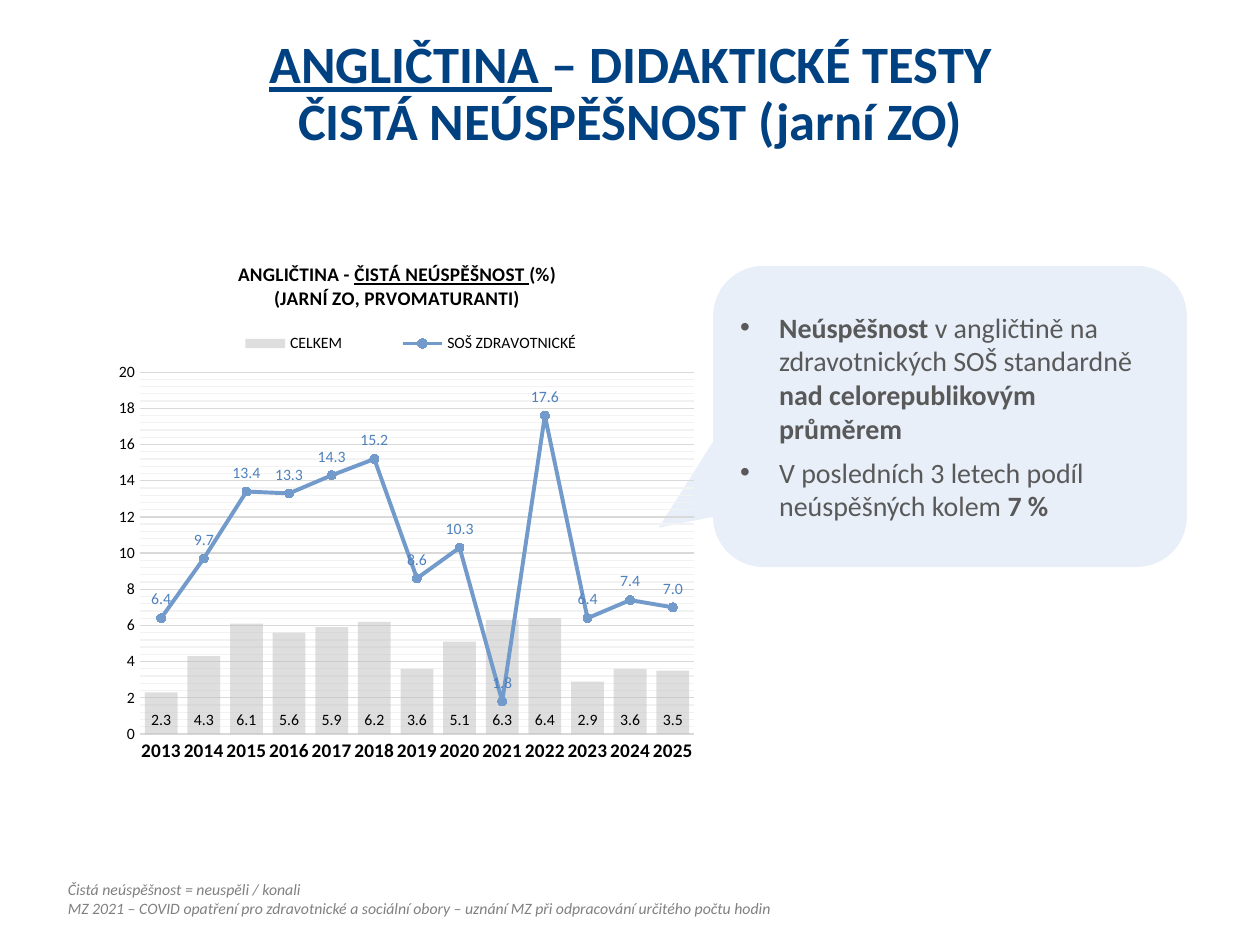
from lxml import etree
from pptx import Presentation
from pptx import util as u
from pptx.chart.data import CategoryChartData
from pptx.dml.color import RGBColor
from pptx.enum import chart as ch, shapes, text
from pptx.oxml import parse_xml
from pptx.oxml.ns import nsdecls, qn

FONT = "Calibri"
YEARS = [str(year) for year in range(2013, 2026)]
ALL_SCHOOLS = [2.3, 4.3, 6.1, 5.6, 5.9, 6.2, 3.6, 5.1, 6.3, 6.4, 2.9, 3.6, 3.5]
HEALTH_SCHOOLS = [6.4, 9.7, 13.4, 13.3, 14.3, 15.2, 8.6, 10.3, 1.8, 17.6, 6.4, 7.4, 7.0]


def inches(*lengths):
    return [u.Inches(length) for length in lengths]


def color(hex_string):
    return RGBColor.from_string(hex_string)


def set_font(font, size, hex_string, bold=False, italic=False, underline=False):
    font.name, font.size = FONT, u.Pt(size)
    font.color.rgb = color(hex_string)
    font.bold, font.italic, font.underline = bold, italic, underline


def set_fill(fill, hex_string, opacity=None):
    fill.solid()
    fill.fore_color.rgb = color(hex_string)
    if opacity is not None:
        solid = fill._xPr.find(qn("a:solidFill"))
        etree.SubElement(solid[0], qn("a:alpha"), val=str(opacity * 1000))


def write(frame, paragraphs, align=None, line_spacing=None, before=None,
          bullet_indent=None, **style):
    """Each paragraph is a list of (text, font overrides) pairs."""
    for number, spans in enumerate(paragraphs):
        para = frame.add_paragraph() if number else frame.paragraphs[0]
        para.alignment = align
        if line_spacing:
            para.line_spacing = line_spacing
        if before:
            para.space_before = u.Pt(before)
        if bullet_indent:
            props = para._p.get_or_add_pPr()
            props.set("marL", str(bullet_indent))
            props.set("indent", str(-bullet_indent))
            etree.SubElement(props, qn("a:buFont"), typeface="Arial")
            etree.SubElement(props, qn("a:buChar"), char="•")
        for words, changes in spans:
            span = para.add_run()
            span.text = words
            set_font(span.font, **{**style, **changes})


def add_text(page, box, paragraphs, anchor=text.MSO_ANCHOR.TOP, **style):
    frame = page.shapes.add_textbox(*inches(*box)).text_frame
    frame.word_wrap = True
    frame.vertical_anchor = anchor
    write(frame, paragraphs, **style)


def add_title(page, box):
    add_text(page, box, [
        [("ANGLIČTINA ", {"underline": True}), ("– DIDAKTICKÉ TESTY", {})],
        [("ČISTÁ NEÚSPĚŠNOST (jarní ZO)", {})],
    ], anchor=text.MSO_ANCHOR.MIDDLE, align=text.PP_ALIGN.CENTER,
        line_spacing=0.9, size=30, hex_string="004182", bold=True)


def add_callout(page, box):
    shape = page.shapes.add_shape(
        shapes.MSO_SHAPE.ROUNDED_RECTANGULAR_CALLOUT, *inches(*box))
    for index, value in enumerate((-0.615, 0.37, 0.167)):
        shape.adjustments[index] = value
    shape.shadow.inherit = False
    set_fill(shape.fill, "C6D9F1", opacity=40)
    shape.line.fill.background()
    frame = shape.text_frame
    frame.word_wrap = True
    frame.vertical_anchor = text.MSO_ANCHOR.MIDDLE
    strong = {"bold": True}
    write(frame, [
        [("Neúspěšnost", strong),
         (" v angličtině na zdravotnických SOŠ standardně ", {}),
         ("nad celorepublikovým průměrem", strong)],
        [("V posledních 3 letech podíl neúspěšných kolem ", {}), ("7 %", strong)],
    ], align=text.PP_ALIGN.LEFT, before=6, bullet_indent=u.Inches(0.31),
        size=16, hex_string="595959")


def set_layout(parent, x, y, width=None, height=None, inner=False):
    """Place a chart part by fractions of the chart area."""
    for old in parent.findall(qn("c:layout")):
        parent.remove(old)
    layout = parse_xml(f"<c:layout {nsdecls('c')}><c:manualLayout/></c:layout>")
    values = {"layoutTarget": "inner" if inner else None,
              "xMode": "edge", "yMode": "edge",
              "x": x, "y": y, "w": width, "h": height}
    for tag, value in values.items():
        if value is not None:
            etree.SubElement(layout[0], qn(f"c:{tag}"), val=str(value))
    leading = [child for child in parent
               if child.tag in (qn("c:tx"), qn("c:legendPos"))]
    parent.insert(len(leading), layout)


def move_to_line_plot(chart, series):
    """Draw a column series as a line on the same axes."""
    columns = chart.plots[0]._element
    line = parse_xml(f'<c:lineChart {nsdecls("c")}><c:grouping val="standard"/>'
                     '<c:varyColors val="0"/><c:marker val="1"/></c:lineChart>')
    element = series._element
    for flag in element.findall(qn("c:invertIfNegative")):
        element.remove(flag)
    line.insert(2, element)
    for axis in columns.findall(qn("c:axId")):
        etree.SubElement(line, qn("c:axId"), val=axis.get("val"))
    columns.addnext(line)


def label_values(series, position, hex_string):
    labels = series.data_labels
    labels.show_value = True
    labels.number_format, labels.number_format_is_linked = "0.0", False
    labels.position = position
    set_font(labels.font, 9, hex_string)


def add_minor_gridlines(axis, hex_string, width):
    axis.has_minor_gridlines = True
    gridlines = axis._element.find(qn("c:minorGridlines"))
    gridlines.append(parse_xml(
        f'<c:spPr {nsdecls("c", "a")}><a:ln w="{u.Pt(width)}"><a:solidFill>'
        f'<a:srgbClr val="{hex_string}"/></a:solidFill></a:ln></c:spPr>'))


def format_axes(chart):
    years, values = chart.category_axis, chart.value_axis
    for axis, size, bold in ((years, 11, True), (values, 9, False)):
        axis.major_tick_mark = axis.minor_tick_mark = ch.XL_TICK_MARK.NONE
        set_font(axis.tick_labels.font, size, "000000", bold=bold)
    values.minimum_scale, values.maximum_scale = 0, 20
    values.major_unit, values.minor_unit = 2, 0.4
    values.tick_labels.number_format = "0"
    values.tick_labels.number_format_is_linked = False
    values.format.line.fill.background()
    for part in (years, values.major_gridlines):
        part.format.line.color.rgb = color("D9D9D9")
        part.format.line.width = u.Pt(0.75)
    add_minor_gridlines(values, "F2F2F2", 0.75)


def add_failure_chart(page, box):
    data = CategoryChartData(number_format="0.0")
    data.categories = YEARS
    data.add_series("CELKEM", ALL_SCHOOLS)
    data.add_series("SOŠ ZDRAVOTNICKÉ", HEALTH_SCHOOLS)
    chart = page.shapes.add_chart(
        ch.XL_CHART_TYPE.COLUMN_CLUSTERED, *inches(*box), data).chart
    set_font(chart.font, 10, "000000")
    format_axes(chart)

    chart.has_title = True
    write(chart.chart_title.text_frame, [
        [("ANGLIČTINA - ", {}), ("ČISTÁ NEÚSPĚŠNOST ", {"underline": True}), ("(%)", {})],
        [("(JARNÍ ZO, PRVOMATURANTI)", {})],
    ], align=text.PP_ALIGN.CENTER, size=11, hex_string="000000", bold=True)
    set_layout(chart.chart_title._element, 0.24, 0.04)

    chart.has_legend = True
    chart.legend.position = ch.XL_LEGEND_POSITION.BOTTOM
    chart.legend.include_in_layout = False
    set_font(chart.legend.font, 9, "000000")
    set_layout(chart.legend._element, 0.17, 0.16, 0.7, 0.06)

    columns = chart.plots[0]
    columns.gap_width = 30
    columns.vary_by_categories = False
    total, health = columns.series
    set_fill(total.format.fill, "BFBFBF", opacity=50)
    label_values(total, ch.XL_LABEL_POSITION.INSIDE_BASE, "000000")

    move_to_line_plot(chart, health)
    health = chart.plots[1].series[0]
    health.smooth = False
    health.format.line.color.rgb = color("729ACA")
    health.format.line.width = u.Pt(2.25)
    health.marker.style = ch.XL_MARKER_STYLE.CIRCLE
    health.marker.size = 5
    set_fill(health.marker.format.fill, "729ACA")
    health.marker.format.line.color.rgb = color("729ACA")
    label_values(health, ch.XL_LABEL_POSITION.ABOVE, "4F81BD")
    set_layout(chart._chartSpace.chart.plotArea, 0.09, 0.24, 0.88, 0.63, inner=True)


def add_footnote(page, box):
    add_text(page, box, [
        [("Čistá neúspěšnost = neuspěli / konali", {})],
        [("MZ 2021 – COVID opatření pro zdravotnické a sociální obory – "
          "uznání MZ při odpracování určitého počtu hodin", {})],
    ], align=text.PP_ALIGN.JUSTIFY, size=9, hex_string="808080", italic=True)


deck = Presentation()
deck.slide_width, deck.slide_height = inches(10, 7.5)
page = deck.slides.add_slide(deck.slide_layouts[6])
add_title(page, (0.33, 0.33, 9.35, 0.85))
add_callout(page, (5.66, 2.11, 3.76, 2.39))
add_failure_chart(page, (0.66, 1.86, 5, 4.56))
add_footnote(page, (0.44, 6.93, 7.88, 0.4))
deck.save("out.pptx")
